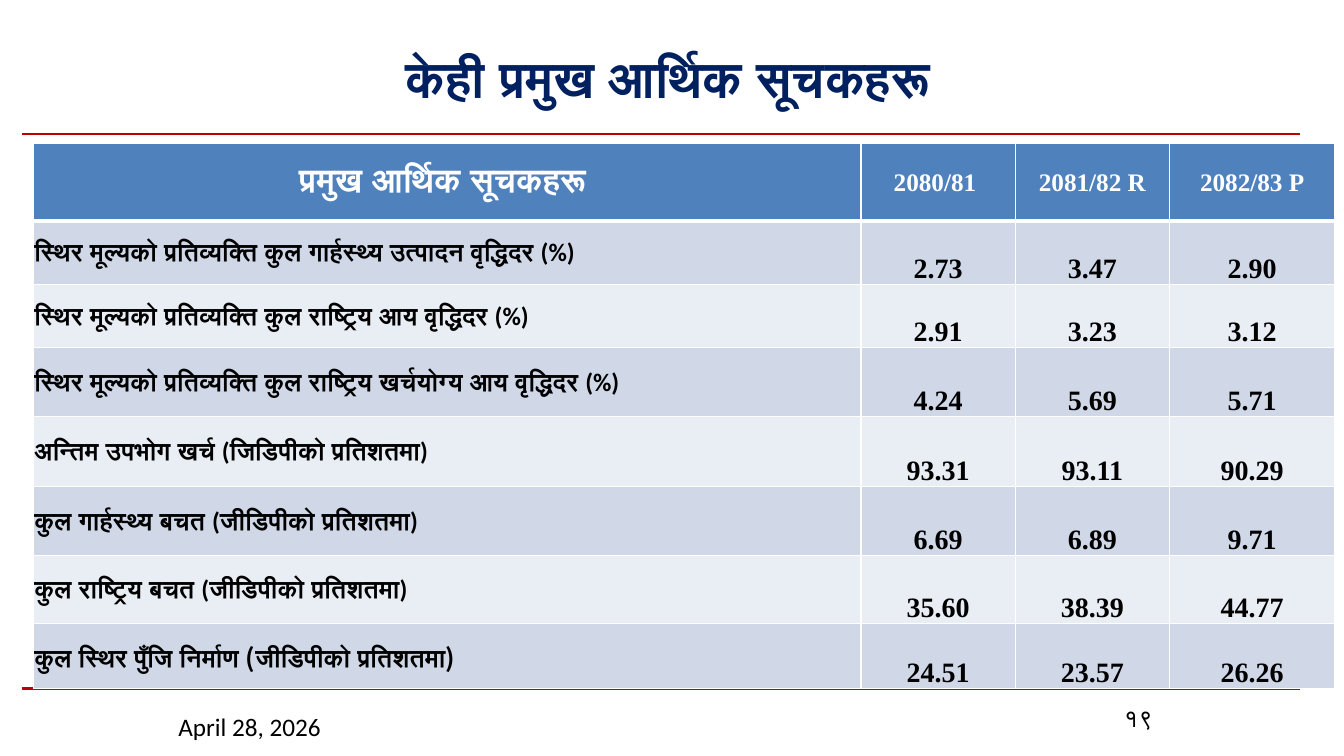
from lxml.etree import SubElement
from pptx import Presentation
from pptx.dml.color import RGBColor
from pptx.enum.shapes import MSO_CONNECTOR
from pptx.enum.text import MSO_ANCHOR, PP_ALIGN
from pptx.oxml.ns import qn
from pptx.util import Inches, Pt

WHITE = RGBColor(0xFF, 0xFF, 0xFF)
BLACK = RGBColor(0x00, 0x00, 0x00)
NAVY = RGBColor(0x00, 0x20, 0x60)
RED = RGBColor(0xC0, 0x00, 0x00)
BLUE = RGBColor(0x4F, 0x81, 0xBD)
BANDS = [RGBColor(0xE9, 0xED, 0xF4), RGBColor(0xD0, 0xD8, 0xE8)]
SANS, SERIF, NOTO = "Calibri", "Times New Roman", "Noto Sans CJK JP"

WIDTHS = [8.21, 1.53, 1.53, 1.64]
HEIGHTS = [0.77, 0.63, 0.63, 0.68, 0.7, 0.68, 0.68, 0.64]
ROWS = [
    ["प्रमुख आर्थिक सूचकहरू ", "2080/81 ", "2081/82 R", "2082/83 P"],
    ["स्थिर मूल्यको प्रतिव्यक्ति कुल गार्हस्थ्य उत्पादन वृद्धिदर (%)", "2.73", "3.47", "2.90"],
    ["स्थिर मूल्यको प्रतिव्यक्ति कुल राष्ट्रिय आय वृद्धिदर (%)", "2.91", "3.23", "3.12"],
    ["स्थिर मूल्यको प्रतिव्यक्ति कुल राष्ट्रिय खर्चयोग्य आय वृद्धिदर (%)", "4.24", "5.69", "5.71"],
    ["अन्तिम उपभोग खर्च (जिडिपीको प्रतिशतमा)", "93.31", "93.11", "90.29"],
    ["कुल गार्हस्थ्य बचत (जीडिपीको प्रतिशतमा)", "6.69", "6.89", "9.71"],
    ["कुल राष्ट्रिय बचत (जीडिपीको प्रतिशतमा)", "35.60", "38.39", "44.77"],
    ["कुल स्थिर पुँजि निर्माण (जीडिपीको प्रतिशतमा)", "24.51", "23.57", "26.26"],
]


def set_text(frame, text, size, face, color, bold=False, align=PP_ALIGN.LEFT):
    frame.text = text
    para = frame.paragraphs[0]
    para.alignment = align
    font = para.runs[0].font
    font.size, font.name, font.bold = Pt(size), face, bold
    font.color.rgb = color


def add_label(slide, box, text, size, face, color, anchor=MSO_ANCHOR.TOP, **style):
    frame = slide.shapes.add_textbox(*map(Inches, box)).text_frame
    frame.word_wrap = True
    frame.vertical_anchor = anchor
    set_text(frame, text, size, face, color, **style)


def add_rule(slide, top):
    rule = slide.shapes.add_connector(
        MSO_CONNECTOR.STRAIGHT, Inches(0.22), Inches(top), Inches(12.89), Inches(top))
    rule.line.color.rgb = RED
    rule.line.width = Pt(1.5)
    SubElement(rule._element.spPr, qn("a:effectLst"))


def add_edges(cell, row):
    props = cell._tc.get_or_add_tcPr()
    heavy = {"T": row == 1, "B": row == 0}
    for side in "LRTB":
        width = Pt(3 if heavy.get(side) else 1)
        line = SubElement(props, qn(f"a:ln{side}"), w=str(width))
        fill = SubElement(line, qn("a:solidFill"))
        SubElement(fill, qn("a:srgbClr"), val=str(WHITE))


def fill_cell(cell, text, row, col):
    add_edges(cell, row)
    cell.fill.solid()
    cell.fill.fore_color.rgb = BANDS[row % 2] if row else BLUE
    cell.margin_left = cell.margin_right = cell.margin_top = Inches(0.01)
    cell.margin_bottom = 0
    value = row > 0 and col > 0
    cell.vertical_anchor = MSO_ANCHOR.BOTTOM if value else MSO_ANCHOR.MIDDLE
    label = row > 0 and col == 0
    size = 20 if value else 18 if row or col else 24
    face = SERIF if col else NOTO if row == len(ROWS) - 1 else SANS
    set_text(cell.text_frame, text, size, face, BLACK if row else WHITE,
             bold=True, align=PP_ALIGN.LEFT if label else PP_ALIGN.CENTER)


def add_grid(slide):
    table = slide.shapes.add_table(
        len(ROWS), len(WIDTHS), Inches(0.33), Inches(1.42),
        Inches(sum(WIDTHS)), Inches(sum(HEIGHTS))).table
    for column, width in zip(table.columns, WIDTHS):
        column.width = Inches(width)
    for row, (texts, height) in enumerate(zip(ROWS, HEIGHTS)):
        table.rows[row].height = Inches(height)
        for col, text in enumerate(texts):
            fill_cell(table.cell(row, col), text, row, col)


def main():
    deck = Presentation()
    deck.slide_width, deck.slide_height = Inches(13.33), Inches(7.5)
    slide = deck.slides.add_slide(deck.slide_layouts[6])
    for top in (1.33, 6.83):
        add_rule(slide, top)
    add_label(slide, (1.75, 0.25, 9.75, 1.03), "केही प्रमुख आर्थिक सूचकहरू", 36, SANS, NAVY,
              anchor=MSO_ANCHOR.MIDDLE, bold=True, align=PP_ALIGN.CENTER)
    add_label(slide, (1.67, 7.01, 2.17, 0.41), "April 28, 2026", 18, SANS, BLACK)
    add_grid(slide)
    add_label(slide, (11, 6.92, 0.58, 0.48), "१९", 18, "Roboto", BLACK, align=PP_ALIGN.CENTER)
    deck.save("out.pptx")


if __name__ == "__main__":
    main()
